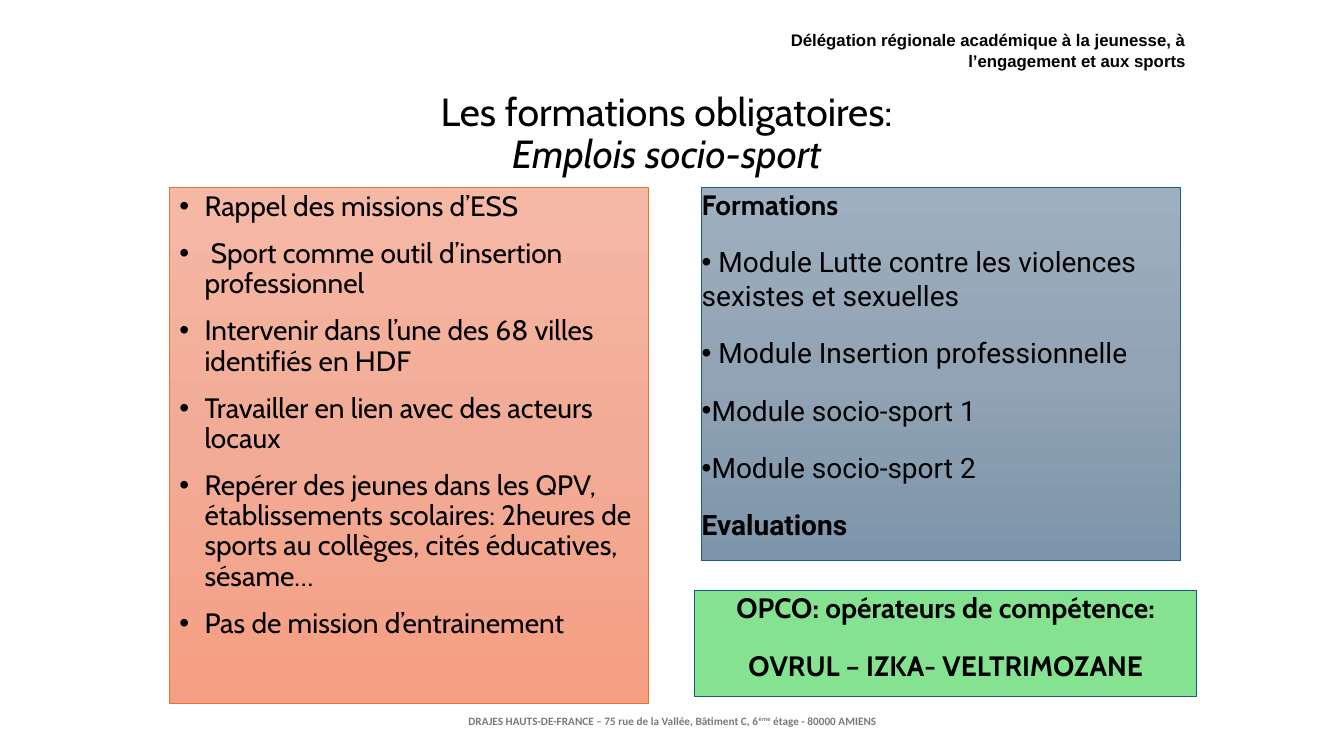
from lxml import etree
from copy import deepcopy
from pptx import Presentation
from pptx.dml.color import RGBColor
from pptx.enum.shapes import MSO_SHAPE
from pptx.enum.text import MSO_ANCHOR, PP_ALIGN
from pptx.oxml.ns import qn
from pptx.util import Inches, Pt

SLIDE_W, SLIDE_H = 13.33, 7.5
COLORS = {
    "text": "000000", "footer": "797979",
    "missions": ("F5B8A5", "F2AB96", "F59E82"), "missions_line": "E97132",
    "modules": ("9EAFBF", "91A3B4", "7C95AB"), "blue_line": "156082",
    "opco": "84E291",
}
TOP, COLUMN_W = 1.86, 4.75
LEFT_X, RIGHT_X = 1.68, 6.96

BODY = {"name": "Cabin", "size": Pt(20)}
BOLD = {**BODY, "bold": True}
MODULE = {**BODY, "name": "Roboto"}
SPACED = {"space_before": Pt(12), "space_after": Pt(5)}
TIGHT = {"space_before": Pt(12), "line_spacing": 0.9}
CENTERED = {"alignment": PP_ALIGN.CENTER}
FLUSH = {"margin_left": 0, "margin_top": 0, "margin_right": 0, "margin_bottom": 0}

MISSIONS = [
    "Rappel des missions d’ESS",
    " Sport comme outil d’insertion professionnel",
    "Intervenir dans l’une des 68 villes identifiés en HDF",
    "Travailler en lien avec des acteurs locaux",
    "Repérer des jeunes dans les QPV, établissements scolaires: 2heures de "
    "sports au collèges, cités éducatives, sésame…",
    "Pas de mission d’entrainement",
]
MODULES = [
    " Module Lutte contre les violences sexistes et sexuelles",
    " Module Insertion professionnelle",
    "Module socio-sport 1",
    "Module socio-sport 2",
]


def apply(target, values):
    for attribute, value in values.items():
        setattr(target, attribute, value)


def add_run(paragraph, text, font, color="text"):
    run = paragraph.add_run()
    run.text = text
    apply(run.font, font)
    run.font.color.rgb = RGBColor.from_string(COLORS[color])
    return run


def add_bullet(paragraph, hanging=0):
    properties = paragraph._p.get_or_add_pPr()
    properties.set("marL", str(Inches(hanging)))
    properties.set("indent", str(-Inches(hanging)))
    etree.SubElement(properties, qn("a:buFont")).set("typeface", "Arial")
    etree.SubElement(properties, qn("a:buChar")).set("char", "•")


def add_paragraph(frame, layout, first=False):
    paragraph = frame.paragraphs[0] if first else frame.add_paragraph()
    apply(paragraph, layout)
    return paragraph


def text_area(slide, box, anchor=MSO_ANCHOR.TOP):
    frame = slide.shapes.add_textbox(*map(Inches, box)).text_frame
    apply(frame, {"word_wrap": True, "vertical_anchor": anchor})
    return frame


def panel(slide, box, fill, line, margins):
    """Outlined rectangle with a plain fill or a top-down gradient."""
    shape = slide.shapes.add_shape(MSO_SHAPE.RECTANGLE, *map(Inches, box))
    shape.shadow.inherit = False
    shape.line.color.rgb = RGBColor.from_string(COLORS[line])
    shape.line.width = Pt(1)
    if isinstance(COLORS[fill], str):
        shape.fill.solid()
        shape.fill.fore_color.rgb = RGBColor.from_string(COLORS[fill])
    else:
        shape.fill.gradient()
        shape.fill.gradient_angle = 270
        stop_list = shape._element.spPr.find(".//" + qn("a:gsLst"))
        stop_list.insert(1, deepcopy(stop_list[0]))
        for index, (stop, color) in enumerate(zip(shape.fill.gradient_stops, COLORS[fill])):
            stop.position = index / 2
            stop.color.rgb = RGBColor.from_string(color)
    frame = shape.text_frame
    apply(frame, {"word_wrap": True, "vertical_anchor": MSO_ANCHOR.TOP, **margins})
    return frame


def header(slide, box):
    paragraph = add_paragraph(text_area(slide, box), {"alignment": PP_ALIGN.RIGHT}, True)
    add_run(paragraph, "Délégation régionale académique à la jeunesse, à l’engagement et aux sports",
            {"name": "Arial", "size": Pt(12), "bold": True})


def title(slide, box):
    heading = {"name": "Cabin", "size": Pt(28)}
    frame = text_area(slide, box, MSO_ANCHOR.MIDDLE)
    paragraph = add_paragraph(frame, {**CENTERED, "line_spacing": 0.9}, True)
    add_run(paragraph, "Les formations obligatoires:", heading)
    paragraph.add_line_break()
    add_run(paragraph, "Emplois socio-sport", {**heading, "italic": True})


def missions(slide, box):
    frame = panel(slide, box, "missions", "missions_line", {})
    for index, mission in enumerate(MISSIONS):
        paragraph = add_paragraph(frame, {**TIGHT, "alignment": PP_ALIGN.LEFT}, index == 0)
        add_bullet(paragraph, hanging=0.25)
        add_run(paragraph, mission, BODY)


def modules(slide, box):
    frame = panel(slide, box, "modules", "blue_line", FLUSH)
    layout = {**SPACED, "alignment": PP_ALIGN.LEFT}
    add_run(add_paragraph(frame, layout, True), "Formations", BOLD)
    for module in MODULES:
        paragraph = add_paragraph(frame, layout)
        add_bullet(paragraph)
        add_run(paragraph, module, MODULE)
    add_run(add_paragraph(frame, layout), "Evaluations", {**MODULE, "bold": True})


def opco(slide, box):
    frame = panel(slide, box, "opco", "blue_line", FLUSH)
    for index, line in enumerate(["OPCO: opérateurs de compétence:", "OVRUL – IZKA- VELTRIMOZANE"]):
        add_run(add_paragraph(frame, {**SPACED, **CENTERED}, index == 0), line, BOLD)


def footer(slide, box):
    paragraph = add_paragraph(text_area(slide, box, MSO_ANCHOR.MIDDLE), CENTERED, True)
    parts = [("DRAJES HAUTS-DE-FRANCE – 75 rue de la Vallée, Bâtiment C, 6", 0),
             ("ème", 30), (" étage - 80000 AMIENS", 0)]
    for text, raised in parts:
        run = add_run(paragraph, text, {"name": "Calibri", "size": Pt(8), "bold": True}, "footer")
        run.font._element.set("baseline", str(raised * 1000))


def main():
    deck = Presentation()
    apply(deck, {"slide_width": Inches(SLIDE_W), "slide_height": Inches(SLIDE_H)})
    slide = deck.slides.add_slide(deck.slide_layouts[6])
    # Heading
    title(slide, (1.62, 0.81, 9.98, 1.05))
    header(slide, (6.9, 0.25, 4.96, 0.5))
    # Two columns
    missions(slide, (LEFT_X, TOP, COLUMN_W, 5.12))
    modules(slide, (RIGHT_X, TOP, COLUMN_W, 3.7))
    opco(slide, (6.89, 5.86, 4.98, 1.05))
    # Address line
    footer(slide, (4.42, 6.95, 4.5, 0.4))
    deck.save("out.pptx")


if __name__ == "__main__":
    main()
